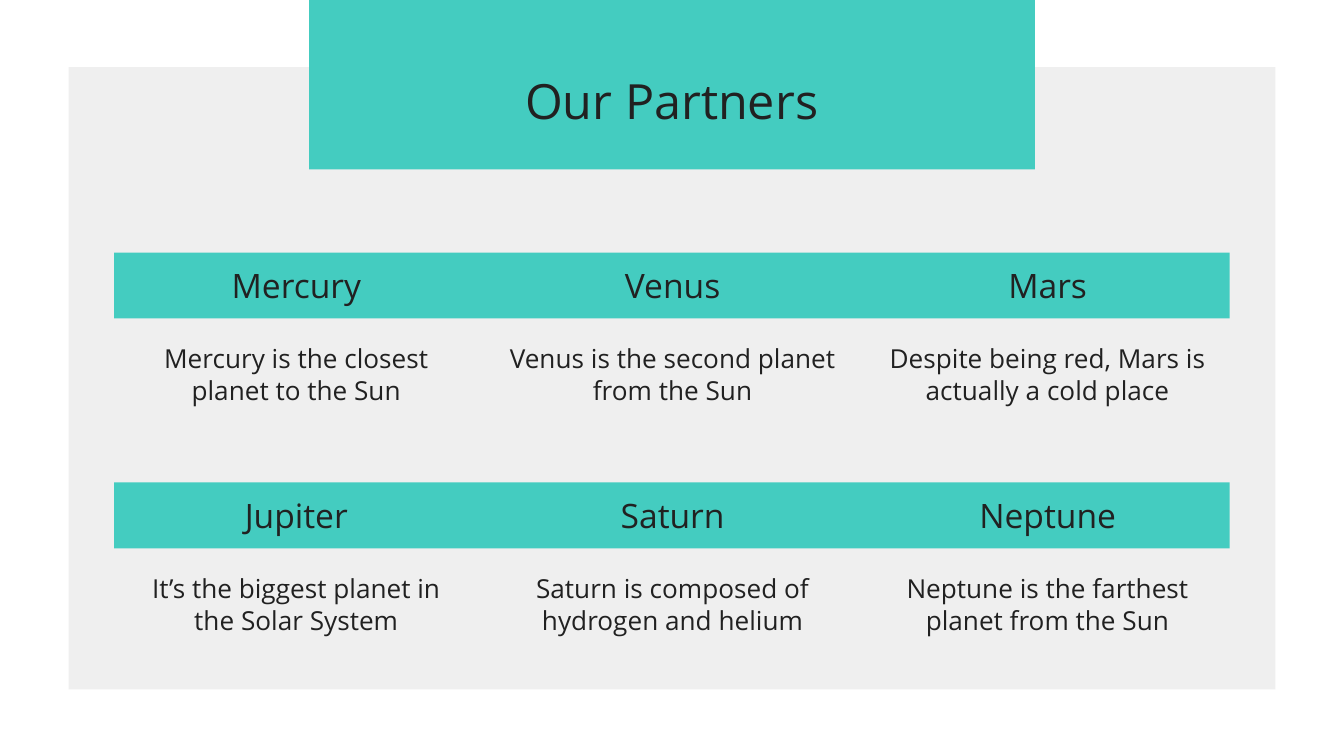
from typing import NamedTuple

from pptx import Presentation
from pptx.dml.color import RGBColor
from pptx.enum.shapes import MSO_SHAPE
from pptx.enum.text import MSO_ANCHOR, PP_ALIGN
from pptx.slide import Slide
from pptx.util import Inches, Pt

COLORS = {"panel": "EFEFEF", "accent": "44CCC0", "text": "212121"}
FONT = "Open Sans"
COLUMN_LEFTS = (0.89, 3.69, 6.48)
ROW_TOPS = (1.88, 3.59)
BAND_HEIGHT = 0.49


class Box(NamedTuple):
    left: float
    top: float
    width: float
    height: float


class Partner(NamedTuple):
    name: str
    description: str


PARTNER_ROWS = (
    (
        Partner("Mercury", "Mercury is the closest planet to the Sun"),
        Partner("Venus", "Venus is the second planet from the Sun"),
        Partner("Mars", "Despite being red, Mars is actually a cold place"),
    ),
    (
        Partner("Jupiter", "It’s the biggest planet in the Solar System"),
        Partner("Saturn", "Saturn is composed of hydrogen and helium"),
        Partner("Neptune", "Neptune is the farthest planet from the Sun"),
    ),
)


def add_rectangle(slide: Slide, box: Box, color: str) -> None:
    """Draw a plain filled rectangle."""
    shape = slide.shapes.add_shape(MSO_SHAPE.RECTANGLE, *map(Inches, box))
    shape.shadow.inherit = False
    shape.fill.solid()
    shape.fill.fore_color.rgb = RGBColor.from_string(COLORS[color])
    shape.line.fill.background()


def add_text(slide: Slide, box: Box, text: str, *, size: float,
             anchor: MSO_ANCHOR = MSO_ANCHOR.TOP) -> None:
    """Add a centred, wrapping text box."""
    frame = slide.shapes.add_textbox(*map(Inches, box)).text_frame
    frame.word_wrap = True
    frame.vertical_anchor = anchor
    frame.margin_left = frame.margin_right = Inches(0.1)
    frame.margin_top = frame.margin_bottom = Inches(0.1)
    paragraph = frame.paragraphs[0]
    paragraph.alignment = PP_ALIGN.CENTER
    run = paragraph.add_run()
    run.text = text
    run.font.name = FONT
    run.font.size = Pt(size)
    run.font.color.rgb = RGBColor.from_string(COLORS["text"])


def add_partner(slide: Slide, partner: Partner, left: float, top: float) -> None:
    """Add a partner's name and the description below it."""
    add_text(slide, Box(left + 0.19, top, 2.25, BAND_HEIGHT), partner.name,
             size=18, anchor=MSO_ANCHOR.BOTTOM)
    add_text(slide, Box(left, top + 0.57, 2.63, 0.68), partner.description, size=14)


def main() -> None:
    """Build the partners slide."""
    presentation = Presentation()
    presentation.slide_width = Inches(10)
    presentation.slide_height = Inches(10 * 9 / 16)
    slide = presentation.slides.add_slide(presentation.slide_layouts[6])

    add_rectangle(slide, Box(0.51, 0.5, 8.98, 4.63), "panel")
    add_rectangle(slide, Box(2.3, -0.06, 5.4, 1.32), "accent")
    add_text(slide, Box(3, 0.43, 4, BAND_HEIGHT), "Our Partners", size=26)
    for top, partners in zip(ROW_TOPS, PARTNER_ROWS):
        add_rectangle(slide, Box(0.85, top, 8.3, BAND_HEIGHT), "accent")
        for left, partner in zip(COLUMN_LEFTS, partners):
            add_partner(slide, partner, left, top)

    presentation.save("out.pptx")


if __name__ == "__main__":
    main()
